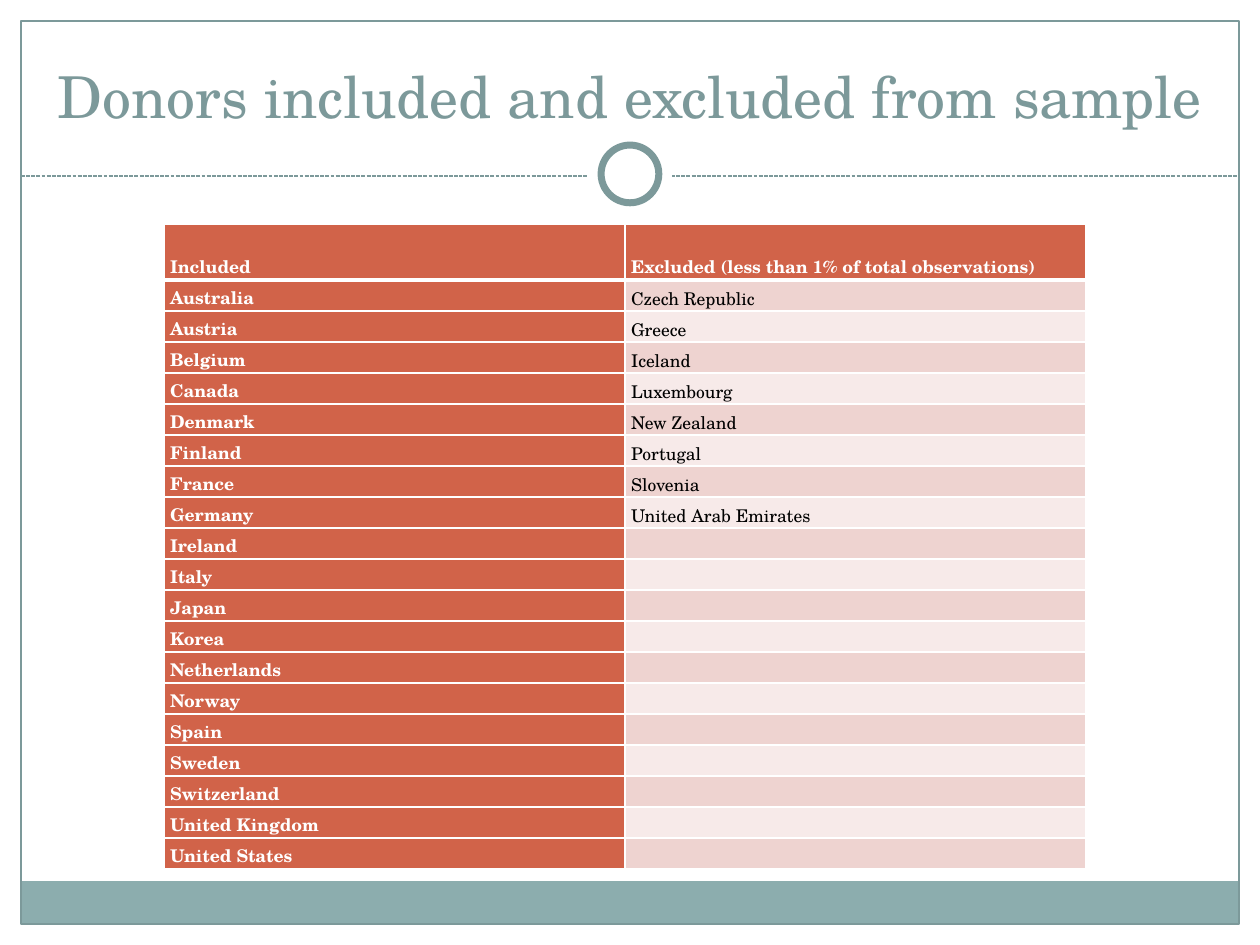
from itertools import zip_longest

from lxml import etree
from pptx import Presentation
from pptx.dml.color import RGBColor
from pptx.enum.dml import MSO_LINE
from pptx.enum.shapes import MSO_CONNECTOR, MSO_SHAPE
from pptx.enum.text import MSO_ANCHOR, MSO_AUTO_SIZE, PP_ALIGN
from pptx.oxml.ns import qn
from pptx.util import Pt

RECT, OVAL = MSO_SHAPE.RECTANGLE, MSO_SHAPE.OVAL
STRAIGHT, DASH = MSO_CONNECTOR.STRAIGHT, MSO_LINE.SQUARE_DOT
BOTTOM, CENTER, FIXED = MSO_ANCHOR.BOTTOM, PP_ALIGN.CENTER, MSO_AUTO_SIZE.NONE
FONT = "TeX Gyre Schola"
WHITE, BLACK, SLATE, TEAL, RUST = "FFFFFF", "000000", "7C999A", "8CADAE", "D16349"
BANDS = ["EED3D0", "F7EAE9"]
HEADS = ["Included", "Excluded (less than 1% of total observations)"]
KEPT = [
    "Australia", "Austria", "Belgium", "Canada", "Denmark", "Finland", "France",
    "Germany", "Ireland", "Italy", "Japan", "Korea", "Netherlands", "Norway",
    "Spain", "Sweden", "Switzerland", "United Kingdom", "United States",
]
LEFT_OUT = [
    "Czech Republic", "Greece", "Iceland", "Luxembourg", "New Zealand",
    "Portugal", "Slovenia", "United Arab Emirates",
]


def color(code):
    """Turn a hex string into a colour."""
    return RGBColor.from_string(code)


def style(font, size, code, bold=False):
    """Set the face, size, colour and weight of a font."""
    font.name, font.size, font.bold = FONT, Pt(size), bold
    font.color.rgb = color(code)


def add_form(slide, kind, box, fill=None, line=None, width=0.75):
    """Add a preset shape with an optional fill and outline."""
    form = slide.shapes.add_shape(kind, *map(Pt, box))
    form.shadow.inherit = False
    if fill:
        form.fill.solid()
        form.fill.fore_color.rgb = color(fill)
    else:
        form.fill.background()
    if line:
        form.line.color.rgb = color(line)
        form.line.width = Pt(width)
    else:
        form.line.fill.background()


def add_frame(slide, box, rule_y):
    """Draw the border, footer band, dashed rule and ring."""
    left, top, width, height = box
    band = 24.5
    add_form(slide, RECT, (left, top + height - band, width, band), TEAL)
    add_form(slide, RECT, box, line=SLATE)
    rule = slide.shapes.add_connector(
        STRAIGHT, Pt(left), Pt(rule_y), Pt(left + width), Pt(rule_y))
    rule.line.color.rgb = color(SLATE)
    rule.line.width = Pt(0.75)
    rule.line.dash_style = DASH
    etree.SubElement(rule._element.spPr, qn("a:effectLst"))
    mid_x, mid_y = left + width / 2, rule_y - 1.2
    for size, line in ((48, None), (33, SLATE)):
        spot = (mid_x - size / 2, mid_y - size / 2, size, size)
        add_form(slide, OVAL, spot, WHITE, line, 4)


def add_title(slide, box, text):
    """Place and format the title placeholder."""
    title = slide.shapes.title
    title.left, title.top, title.width, title.height = map(Pt, box)
    frame = title.text_frame
    frame.text = text
    frame.word_wrap, frame.auto_size = True, FIXED
    frame.vertical_anchor = BOTTOM
    frame.margin_left = frame.margin_right = 0
    para = frame.paragraphs[0]
    para.alignment = CENTER
    style(para.runs[0].font, 33, SLATE)


def add_edge(cell, side, width):
    """Give one side of a cell a white border."""
    props = cell._tc.get_or_add_tcPr()
    edge = etree.SubElement(props, qn("a:ln" + side), w=str(Pt(width)))
    paint = etree.SubElement(edge, qn("a:solidFill"))
    etree.SubElement(paint, qn("a:srgbClr"), val=WHITE)


def fill_cell(cell, text, row, col):
    """Write and format one table cell."""
    solid = row == 0 or col == 0
    cell.margin_left = cell.margin_right = Pt(3.6)
    cell.margin_top = cell.margin_bottom = 0
    cell.vertical_anchor = BOTTOM
    for side in "LRTB":
        thick = (row, side) in ((0, "B"), (1, "T"))
        add_edge(cell, side, 3 if thick else 1)
    cell.fill.solid()
    cell.fill.fore_color.rgb = color(RUST if solid else BANDS[(row - 1) % 2])
    para = cell.text_frame.paragraphs[0]
    para.line_spacing = 1.15
    if text:
        para.text = text
        style(para.runs[0].font, 10, WHITE if solid else BLACK, solid)
    else:
        etree.SubElement(para._p, qn("a:endParaRPr"), sz="1000")


def add_donors(slide, box, rows):
    """Build the donor table with a taller head row."""
    left, top, width, height = box
    grid = slide.shapes.add_table(len(rows), 2, *map(Pt, box)).table
    head = 31.7
    step = (height - head) / (len(rows) - 1)
    for col in grid.columns:
        col.width = Pt(width / 2)
    for i, row in enumerate(rows):
        grid.rows[i].height = Pt(step if i else head)
        for j, text in enumerate(row):
            fill_cell(grid.cell(i, j), text, i, j)


def main():
    """Build and save the slide."""
    deck = Presentation()
    deck.slide_width, deck.slide_height = Pt(720), Pt(540)
    slide = deck.slides.add_slide(deck.slide_layouts[5])
    add_frame(slide, (12, 12, 696, 516), 100.6)
    add_title(slide, (24, 18, 672, 60), "Donors included and excluded from sample")
    rows = [HEADS, *zip_longest(KEPT, LEFT_OUT, fillvalue="")]
    add_donors(slide, (93.6, 128.3, 527, 368.6), rows)
    deck.save("out.pptx")


if __name__ == "__main__":
    main()
